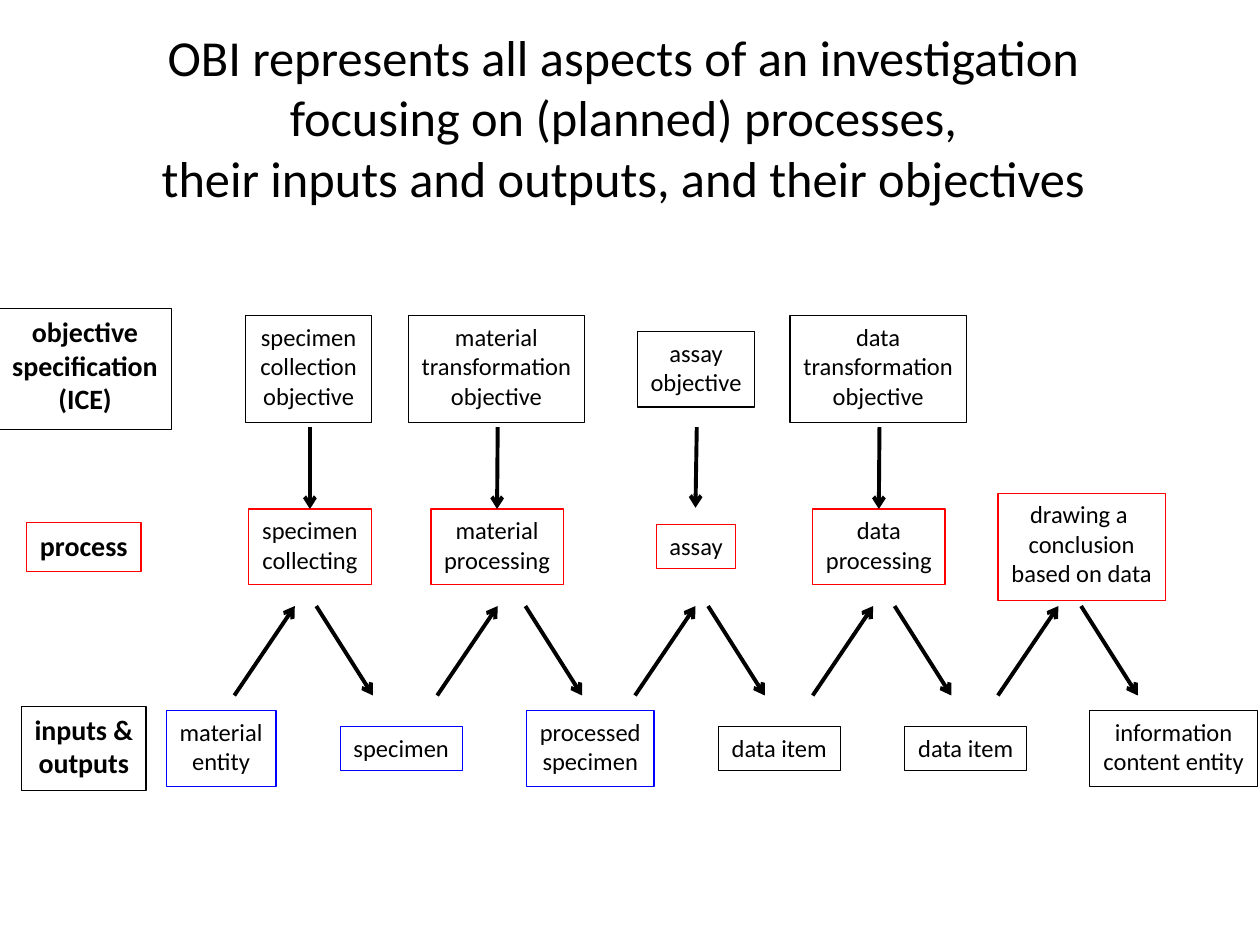
from dataclasses import dataclass

from lxml import etree
from pptx import Presentation
from pptx.dml.color import RGBColor
from pptx.enum.shapes import MSO_CONNECTOR, MSO_SHAPE
from pptx.enum.text import MSO_ANCHOR, MSO_AUTO_SIZE, PP_ALIGN
from pptx.oxml.ns import qn
from pptx.util import Inches, Pt

RECT = MSO_SHAPE.RECTANGLE
STRAIGHT = MSO_CONNECTOR.STRAIGHT
CENTER = PP_ALIGN.CENTER
TOP, MIDDLE = MSO_ANCHOR.TOP, MSO_ANCHOR.MIDDLE
FIT_SHAPE = MSO_AUTO_SIZE.SHAPE_TO_FIT_TEXT

BLACK = RGBColor(0x00, 0x00, 0x00)
RED = RGBColor(0xFF, 0x00, 0x00)
BLUE = RGBColor(0x00, 0x00, 0xFF)
FONT = "Calibri"

# Vertical centres of the three rows, and heights by number of lines
OBJECTIVE_Y, PROCESS_Y, DATA_Y = 2.93, 4.34, 5.94
HEIGHTS = {14: (0.35, 0.6, 0.85), 16: (0.39, 0.67, 0.96)}
# Vertical ends of the arrows
OBJECTIVE_END, PROCESS_START = 3.39, 4.03
PROCESS_END, DATA_START = 4.81, 5.52


@dataclass
class Box:
    text: str
    left: float
    width: float
    line: RGBColor = BLACK
    size: int = 14


OBJECTIVES = [
    Box("specimen\ncollection\nobjective", 1.95, 1.0),
    Box("material\ntransformation\nobjective", 3.24, 1.4),
    Box("assay\nobjective", 5.06, 0.93),
    Box("data\ntransformation\nobjective", 6.27, 1.4),
    Box("objective\nspecification\n(ICE)", -0.01, 1.37, size=16),
]
PROCESSES = [
    Box("specimen\ncollecting", 1.97, 0.98, RED),
    Box("material\nprocessing", 3.42, 1.05, RED),
    Box("assay", 5.21, 0.63, RED),
    Box("data\nprocessing", 6.45, 1.05, RED),
    Box("drawing a \nconclusion\nbased on data", 7.92, 1.33, RED),
    Box("process", 0.21, 0.91, RED, 16),
]
INPUTS_OUTPUTS = [
    Box("material\nentity", 1.32, 0.87, BLUE),
    Box("specimen", 2.7, 0.97, BLUE),
    Box("processed\nspecimen", 4.18, 1.01, BLUE),
    Box("data item", 5.7, 0.97),
    Box("data item", 7.18, 0.97),
    Box("information\ncontent entity", 8.65, 1.33),
    Box("inputs &\noutputs", 0.17, 0.99, size=16),
]
OBJECTIVE_ARROWS = [2.46, 3.95, 5.53, 6.98]
INPUT_ARROWS = [1.86, 3.47, 5.04, 6.45, 7.92]
OUTPUT_ARROWS = [2.51, 4.17, 5.62, 7.1, 8.58]


def add_box(s, box: Box, middle: float):
    """Draw a bordered box centred on its row."""
    height = HEIGHTS[box.size][box.text.count("\n")]
    sp = s.shapes.add_shape(RECT, Inches(box.left), Inches(middle - height / 2),
                            Inches(box.width), Inches(height))
    sp.shadow.inherit = False
    sp.fill.background()
    sp.line.color.rgb = box.line
    sp.line.width = Pt(0.75)
    tf = sp.text_frame
    tf.text = box.text
    tf.word_wrap = False
    tf.auto_size = FIT_SHAPE
    tf.vertical_anchor = TOP
    for p in tf.paragraphs:
        p.alignment = CENTER
        p.font.name = FONT
        p.font.size = Pt(box.size)
        p.font.bold = box.size == 16
        p.font.color.rgb = BLACK
    return sp


def add_arrow(s, x1: float, y1: float, x2: float, y2: float):
    """Draw a black line with an open arrowhead at its end."""
    line = s.shapes.add_connector(STRAIGHT, Inches(x1), Inches(y1),
                                  Inches(x2), Inches(y2))
    line.line.color.rgb = BLACK
    line.line.width = Pt(2.25)
    etree.SubElement(line.line._get_or_add_ln(), qn("a:tailEnd"), type="arrow")
    etree.SubElement(line._element.spPr, qn("a:effectLst"))
    return line


def main() -> None:
    prs = Presentation()
    prs.slide_width, prs.slide_height = Inches(10), Inches(7.5)
    s = prs.slides.add_slide(prs.slide_layouts[5])

    # Title
    title = s.shapes.title
    title.left, title.top = Inches(-0.01), Inches(0.3)
    title.width, title.height = Inches(10.01), Inches(1.25)
    tf = title.text_frame
    tf.text = ("OBI represents all aspects of an investigation \v"
               "focusing on (planned) processes, \v"
               "their inputs and outputs, and their objectives ")
    tf.auto_size = MSO_AUTO_SIZE.NONE
    tf.vertical_anchor = MIDDLE
    p = tf.paragraphs[0]
    p.alignment = CENTER
    p.font.name = FONT
    p.font.size = Pt(28.8)
    p.font.color.rgb = BLACK

    # Rows of boxes, each with its label
    for box in OBJECTIVES:
        add_box(s, box, OBJECTIVE_Y)
    processes = [add_box(s, box, PROCESS_Y) for box in PROCESSES]
    for box in INPUTS_OUTPUTS:
        add_box(s, box, DATA_Y)

    # Objectives to processes; the assay arrow stops short of its lower box
    for x, box, process in zip(OBJECTIVE_ARROWS, PROCESSES, processes):
        arrow = add_arrow(s, x, OBJECTIVE_END, x - 0.01, PROCESS_START)
        if box.text != "assay":
            arrow.end_connect(process, 0)

    # Inputs up to processes, processes down to outputs
    for x in INPUT_ARROWS:
        add_arrow(s, x, DATA_START, x + 0.48, PROCESS_END)
    for x in OUTPUT_ARROWS:
        add_arrow(s, x, PROCESS_END, x + 0.45, DATA_START)

    prs.save("out.pptx")


if __name__ == "__main__":
    main()
